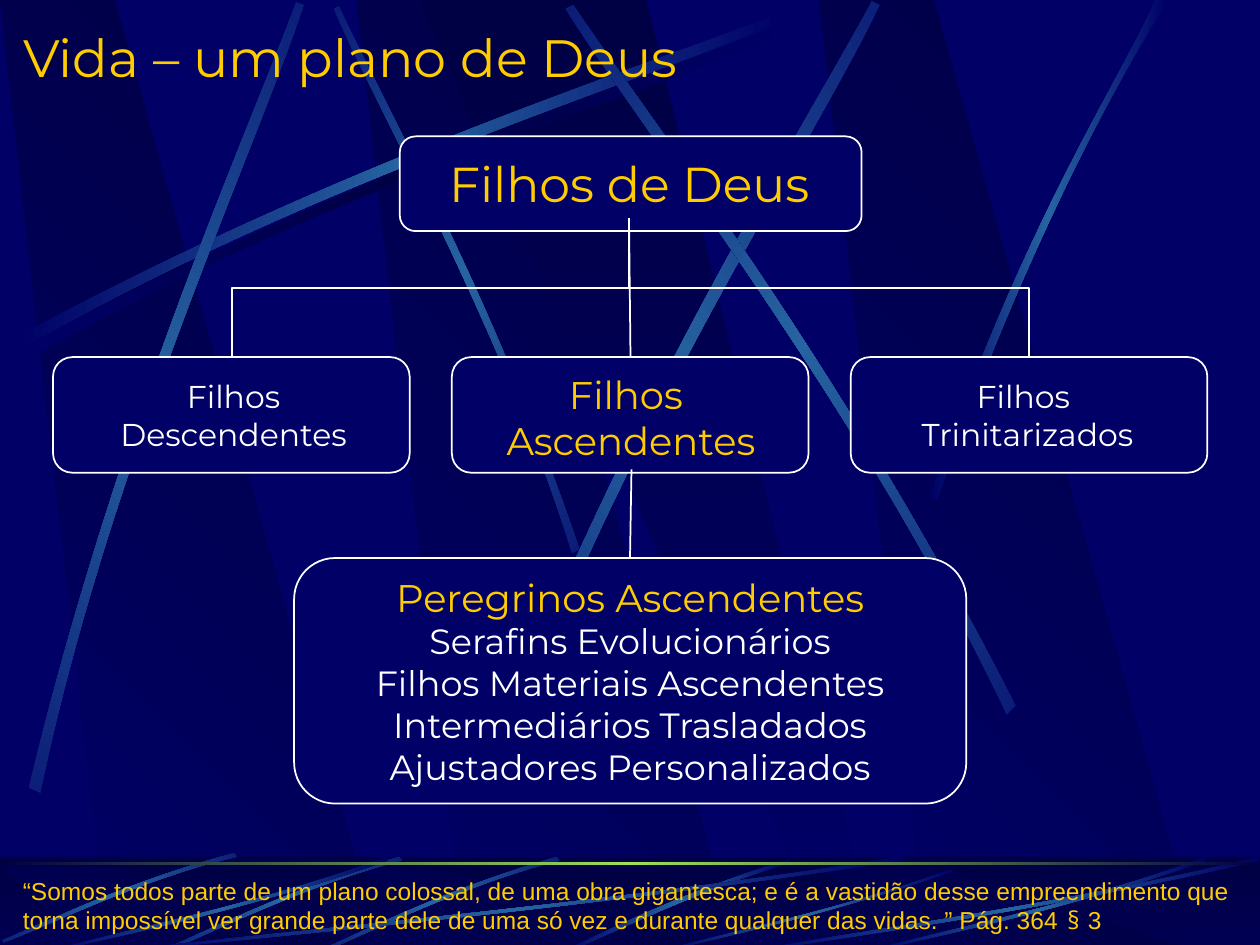
from math import cos, radians, sin
from lxml.etree import SubElement
from pptx import Presentation
from pptx.dml.color import RGBColor
from pptx.enum.shapes import MSO_CONNECTOR, MSO_SHAPE
from pptx.enum.text import MSO_ANCHOR, PP_ALIGN
from pptx.oxml.ns import qn
from pptx.util import Cm, Pt

COLOURS = {"navy": "000066", "night": "000044", "beam": "2663A0",
           "lime": "9CE157", "gold": "FFCC00", "white": "FFFFFF"}
GRID = Cm(2.54)
GLOW = ("navy", "beam", "navy")
SHADE = ("navy", "night", "navy")

UPPER_RAYS = [
    (SHADE, 0, [(0.2, 2.75), (2.84, 1.34), (5.24, 0.59), (6.26, 0.18),
                (6.29, 0.24), (5.28, 0.69), (2.54, 1.51), (0.23, 2.85)]),
    (GLOW, 45, [(4.6, 4.36), (3.91, 2.34), (3.02, 0.77), (2.69, 0.05),
                (2.65, 0.07), (2.95, 0.79), (3.98, 2.58), (4.54, 4.39)]),
    (GLOW, 0, [(0.14, 2.67), (2.78, 1.25), (5.18, 0.51), (6.2, 0.1),
               (6.23, 0.16), (5.22, 0.61), (2.48, 1.43), (0.17, 2.77)]),
    (GLOW, 311.7, [(0.23, 6.25), (0.93, 3.34), (1.97, 1.05), (2.35, 0.02),
                   (2.41, 0.04), (2.07, 1.09), (0.86, 3.68), (0.32, 6.29)]),
    (GLOW, 321.6, [(3.85, 6.14), (4.98, 3.2), (6.38, 1.02), (6.92, 0.01),
                   (6.98, 0.04), (6.49, 1.08), (4.86, 3.55), (3.94, 6.21)]),
    (GLOW, 34.7, [(8.06, 5.6), (6.7, 2.93), (5.16, 0.95), (4.55, 0.04),
                  (4.49, 0.07), (5.07, 1.01), (6.85, 3.25), (7.99, 5.67)]),
    (GLOW, 0, [(7.38, 3.94), (8.14, 1.73), (8.88, 0.66), (9.17, 0),
               (9.27, 0), (8.36, 1.45), (7.69, 3.22), (7.44, 3.97)]),
]
LOWER_RAYS = [
    (GLOW, 0, [(6.27, 6.82), (5.37, 7.09), (4.77, 7.42), (4.48, 7.54),
               (4.53, 7.55), (4.9, 7.38), (5.71, 7), (6.28, 6.85)]),
    (GLOW, 315, [(4.42, 6.8), (3.55, 7.05), (2.87, 7.4), (2.56, 7.53),
                 (2.57, 7.55), (2.88, 7.43), (3.65, 7.03), (4.44, 6.83)]),
    (GLOW, 315, [(3.17, 6.8), (2.3, 7.05), (1.62, 7.4), (1.31, 7.53),
                 (1.32, 7.55), (1.63, 7.43), (2.4, 7.03), (3.19, 6.83)]),
    (GLOW, 315, [(1.86, 6.77), (0.99, 7), (0.33, 7.34), (0.02, 7.46),
                 (0.03, 7.48), (0.34, 7.37), (1.1, 6.98), (1.88, 6.8)]),
    (GLOW, 0, [(7.17, 6.83), (4.49, 7.23), (2.06, 7.44), (1.03, 7.55),
               (1, 7.54), (2.02, 7.41), (4.8, 7.18), (7.14, 6.8)]),
    (GLOW, 0, [(3.08, 6.83), (1.93, 7.23), (0.88, 7.44), (0.43, 7.55),
               (0.42, 7.54), (0.86, 7.41), (2.06, 7.18), (3.07, 6.8)]),
    (GLOW, 0, [(7.58, 6.91), (6.58, 7.26), (5.67, 7.45), (5.28, 7.55),
               (5.27, 7.54), (5.65, 7.43), (6.69, 7.22), (7.57, 6.89)]),
    (GLOW, 0, [(9.58, 6.83), (8.43, 7.23), (7.38, 7.44), (6.93, 7.55),
               (6.92, 7.54), (7.36, 7.41), (8.56, 7.18), (9.57, 6.8)]),
    (GLOW, 0, [(10, 6.83), (8.27, 7.23), (6.69, 7.44), (6.02, 7.55),
               (6, 7.54), (6.66, 7.41), (8.46, 7.18), (9.98, 6.8)]),
]


def colour(name):
    """Return the named colour."""
    return RGBColor.from_string(COLOURS[name])


def paint_gradient(shape, names, angle):
    """Fill a shape with evenly spaced colours along a clockwise angle."""
    shape.shadow.inherit = False
    shape.line.fill.background()
    shape.fill.gradient()
    shape.fill.gradient_angle = -angle % 360
    stops = shape.element.spPr.find(f".//{qn('a:gsLst')}")
    for stop in list(stops):
        stops.remove(stop)
    for index, name in enumerate(names):
        position = round(100000 * index / (len(names) - 1))
        stop = SubElement(stops, qn("a:gs"), pos=str(position))
        SubElement(stop, qn("a:srgbClr"), val=COLOURS[name])


def add_outline(page, points, names, angle):
    """Draw a closed outline from grid points with a gradient fill."""
    scaled = [(x * GRID, y * GRID) for x, y in points]
    builder = page.shapes.build_freeform(*scaled[0], scale=1.0)
    builder.add_line_segments(scaled[1:], close=True)
    shape = builder.convert_to_shape()
    paint_gradient(shape, names, angle)
    return shape


def turn(point, angle):
    """Turn a point clockwise about the origin."""
    x, y = point
    c, s = cos(radians(angle)), sin(radians(angle))
    return x * c - y * s, x * s + y * c


def add_rays(page, rays):
    """Draw tapered rays, each with two curved edges, turned as a whole."""
    for names, angle, points in rays:
        ray = add_outline(page, [turn(point, -angle) for point in points], names, 0)
        outline = ray.element.spPr.find(f".//{qn('a:path')}")
        segments = outline.findall(qn("a:lnTo"))
        for edge in (segments[:3], segments[4:]):
            curve = SubElement(outline, qn("a:cubicBezTo"))
            edge[0].addprevious(curve)
            for segment in edge:
                curve.append(segment[0])
                outline.remove(segment)
        center = turn((ray.left + ray.width / 2, ray.top + ray.height / 2), angle)
        ray.left = round(center[0] - ray.width / 2)
        ray.top = round(center[1] - ray.height / 2)
        ray.rotation = angle


def add_bands(page, top, bottom):
    """Draw the four slanted background bands between two heights."""
    for left in (2.83, 0, 6.5):
        points = [(left + 0.86, bottom), (left + 3.02, bottom),
                  (left + 0.91, top), (left, top)]
        add_outline(page, points, ("navy", "night"), 315)
    points = [(3.33, top), (6.58, bottom), (6.94, bottom), (5.13, top)]
    add_outline(page, points, ("night", "navy"), 90)


def add_strip(page, top, height):
    """Add a rectangle across the whole slide."""
    strip = page.shapes.add_shape(MSO_SHAPE.RECTANGLE, 0, Cm(top), Cm(25.4), Cm(height))
    strip.shadow.inherit = False
    strip.line.fill.background()
    return strip


def add_backdrop(master, page):
    """Draw the bands, rays and footer strip and hand them to the master."""
    master.background.fill.solid()
    master.background.fill.fore_color.rgb = colour("navy")
    add_bands(page, 0, 7.52)
    add_rays(page, UPPER_RAYS)
    paint_gradient(add_strip(page, 17.27, 1.9), ("night", "navy"), 90)
    add_bands(page, 6.88, 7.55)
    veil = add_strip(page, 17.27, 1.9)
    veil.fill.solid()
    veil.fill.fore_color.rgb = colour("night")
    SubElement(veil.element.spPr.find(f".//{qn('a:srgbClr')}"), qn("a:alpha"), val="50000")
    add_rays(page, LOWER_RAYS)
    paint_gradient(add_strip(page, 17.37, 0.06), ("night", "lime", "night"), 0)
    parts = [shape for shape in page.shapes if not shape.is_placeholder]
    group = page.shapes.add_group_shape(parts).element
    for number, label in enumerate(group.iter(qn("p:cNvPr")), 100):
        label.set("id", str(number))
    master.placeholders[0].element.addprevious(group)


def add_card(page, left, top, width, height):
    """Add a rounded, white-edged card."""
    card = page.shapes.add_shape(MSO_SHAPE.FLOWCHART_ALTERNATE_PROCESS,
                                 Cm(left), Cm(top), Cm(width), Cm(height))
    card.shadow.inherit = False
    card.fill.solid()
    card.fill.fore_color.rgb = colour("navy")
    card.line.color.rgb = colour("white")
    card.line.width = Pt(1)
    return card


def write_lines(box, lines, align=PP_ALIGN.CENTER):
    """Write one paragraph for each text, size and colour."""
    frame = box.text_frame
    for index, (text, size, name) in enumerate(lines):
        para = frame.add_paragraph() if index else frame.paragraphs[0]
        para.text = text
        para.alignment = align
        para.font.name = "Montserrat"
        para.font.size = Pt(size)
        para.font.color.rgb = colour(name)


def add_label(page, left, top, width, height, lines):
    """Add a centred label that does not wrap."""
    box = page.shapes.add_textbox(Cm(left), Cm(top), Cm(width), Cm(height))
    box.text_frame.word_wrap = False
    write_lines(box, lines)


def add_line(page, kind, start, end):
    """Add a white connector."""
    line = page.shapes.add_connector(kind, *map(Cm, start + end))
    line.line.color.rgb = colour("white")
    line.line.width = Pt(1)
    SubElement(line.element.spPr, qn("a:effectLst"))
    return line


def add_branch(page, start, end):
    """Add an elbow that leaves downwards, by turning a level one."""
    middle_x, middle_y = (start[0] + end[0]) / 2, (start[1] + end[1]) / 2
    side = 1 if end[0] > start[0] else -1
    reach = side * (end[1] - start[1]) / 2
    half = abs(end[0] - start[0]) / 2
    line = add_line(page, MSO_CONNECTOR.ELBOW, (middle_x + reach, middle_y - half),
                    (middle_x - reach, middle_y + half))
    angle = 270 if side > 0 else 90
    line.element.spPr.find(qn("a:xfrm")).set("rot", str(angle * 60000))


def add_title(page):
    """Place and write the title."""
    title = page.shapes.title
    title.left, title.top, title.width, title.height = map(Cm, (0.21, 0.38, 17.5, 1.52))
    title.text_frame.vertical_anchor = MSO_ANCHOR.MIDDLE
    write_lines(title, [("Vida – um plano de Deus", 30, "gold")], PP_ALIGN.LEFT)


def add_quote(page):
    """Add the quotation in the footer."""
    box = page.shapes.add_textbox(Cm(0.21), Cm(17.52), Cm(25.19), Cm(1.45))
    box.text_frame.word_wrap = True
    box.text_frame.vertical_anchor = MSO_ANCHOR.MIDDLE
    para = box.text_frame.paragraphs[0]
    para.font.size = Pt(14)
    para.font.color.rgb = colour("gold")
    quote = ("“Somos todos parte de um plano colossal, de uma obra gigantesca; e é a "
             "vastidão desse empreendimento que torna impossível ver grande parte dele "
             "de uma só vez e durante qualquer das vidas. ” Pág. 364 ")
    for text, font in ((quote, "Arial"), ("§", "Noto Sans Mono"), (" 3", "Arial")):
        span = para.add_run()
        span.text = text
        span.font.name = font


def main():
    """Build and save the slide."""
    deck = Presentation()
    deck.slide_width, deck.slide_height = Cm(25.4), Cm(19.05)
    page = deck.slides.add_slide(deck.slide_layouts[5])
    add_backdrop(deck.slide_master, page)
    for column in (2, 1, 0):
        add_card(page, 1.07 + 8.04 * column, 7.2, 7.19, 2.33)
    add_card(page, 8.06, 2.75, 9.31, 1.91)
    add_title(page)
    add_label(page, 8.48, 2.97, 8.41, 1.45, [("Filhos de Deus", 28, "gold")])
    add_label(page, 1.98, 7.47, 5.46, 1.78,
              [("Filhos", 18, "white"), ("Descendentes", 18, "white")])
    add_label(page, 9.71, 7.35, 6.02, 2.11,
              [("Filhos ", 22, "gold"), ("Ascendentes", 22, "gold")])
    add_label(page, 18.06, 7.47, 5.31, 1.78,
              [("Filhos ", 18, "white"), ("Trinitarizados", 18, "white")])
    pilgrims = add_card(page, 5.93, 11.25, 13.55, 4.95)
    pilgrims.text_frame.vertical_anchor = MSO_ANCHOR.MIDDLE
    others = ("Serafins Evolucionários", "Filhos Materiais Ascendentes",
              "Intermediários Trasladados", "Ajustadores Personalizados")
    write_lines(pilgrims, [("Peregrinos Ascendentes", 22, "gold")]
                + [(text, 20, "white") for text in others])
    root = (12.68, 4.4)
    add_branch(page, root, (20.75, 7.2))
    add_branch(page, root, (4.67, 7.2))
    add_line(page, MSO_CONNECTOR.STRAIGHT, root, (12.71, 7.2))
    add_line(page, MSO_CONNECTOR.STRAIGHT, (12.73, 9.46), (12.7, 11.25))
    add_quote(page)
    deck.save("out.pptx")


if __name__ == "__main__":
    main()
